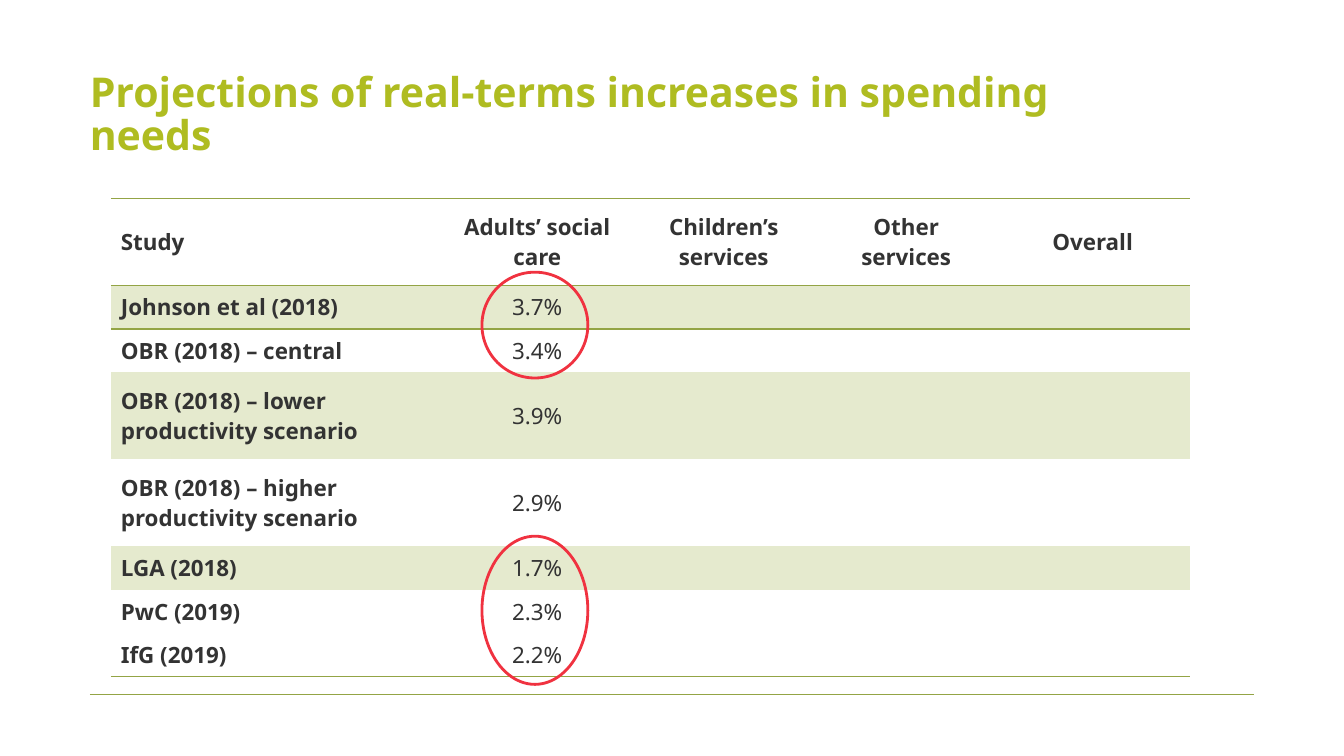
from pptx import Presentation
from pptx.dml.color import RGBColor as RGB
from pptx.enum.shapes import MSO_CONNECTOR as Conn, MSO_SHAPE as Shape
from pptx.enum.text import MSO_ANCHOR as Anchor, PP_ALIGN as Align
from pptx.oxml import parse_xml
from pptx.oxml.ns import nsdecls, qn
from pptx.util import Inches, Pt

HUES = {"title": "AFBC21", "rule": "93A445", "text": "333333",
        "band": "E5EACE", "ring": "F03240"}
PLAIN = "{2D5ABB26-0587-4C30-8999-92F81FD0307C}"
COLS = [24.83, 13.8, 13.95, 13.2, 14.55]
ROW = 5.75
HEADS = ["Study", "Adults’ social care", "Children’s services",
         "Other services", "Overall"]
# study, adults' care, row units, shaded
STUDIES = [
    ("Johnson et al (2018)", "3.7%", 1, True),
    ("OBR (2018) – central", "3.4%", 1, False),
    ("OBR (2018) – lower productivity scenario", "3.9%", 2, True),
    ("OBR (2018) – higher productivity scenario", "2.9%", 2, False),
    ("LGA (2018)", "1.7%", 1, True),
    ("PwC (2019)", "2.3%", 1, False),
    ("IfG (2019)", "2.2%", 1, False),
]


class Deck:
    """Draws on one slide; lengths are percentages of its width and height."""

    def __init__(self, font):
        self.prs = Presentation()
        self.prs.slide_width, self.prs.slide_height = Inches(13.33), Inches(7.5)
        self.slide = self.prs.slides.add_slide(self.prs.slide_layouts[6])
        self.shapes, self.font = self.slide.shapes, font

    def wide(self, share):
        return round(self.prs.slide_width * share / 100)

    def high(self, share):
        return round(self.prs.slide_height * share / 100)

    def box(self, x, y, w, h):
        return self.wide(x), self.high(y), self.wide(w), self.high(h)

    def label(self, para, text, hue, size, bold, **form):
        para.text = text
        for key, val in form.items():
            setattr(para, key, val)
        look = {"name": self.font, "size": Pt(size), "bold": bold}
        font = para.runs[0].font
        for key, val in look.items():
            setattr(font, key, val)
        font.color.rgb = RGB.from_string(HUES[hue])

    def title(self, text, *area):
        frame = self.shapes.add_textbox(*self.box(*area)).text_frame
        form = {"word_wrap": True, "vertical_anchor": Anchor.MIDDLE,
                "margin_left": 0, "margin_right": 0,
                "margin_top": 0, "margin_bottom": 0}
        for key, val in form.items():
            setattr(frame, key, val)
        self.label(frame.paragraphs[0], text, "title", 29.3, True,
                   line_spacing=0.88)

    def rule(self, x, y, end):
        line = self.shapes.add_connector(
            Conn.STRAIGHT, self.wide(x), self.high(y),
            self.wide(end), self.high(y))
        line.line.color.rgb = RGB.from_string(HUES["rule"])
        line.line.width = Pt(0.75)
        line._element.spPr.append(
            parse_xml(f"<a:effectLst {nsdecls('a')}/>"))

    def ring(self, *area):
        oval = self.shapes.add_shape(Shape.OVAL, *self.box(*area))
        oval.shadow.inherit = False
        oval.fill.background()
        oval.line.color.rgb = RGB.from_string(HUES["ring"])
        oval.line.width = Pt(2)

    def edge(self, cell, side):
        """Rule one side of a cell; call before filling it."""
        cell._tc.get_or_add_tcPr().append(parse_xml(
            f'<a:ln{side} {nsdecls("a")} w="12700"><a:solidFill>'
            f'<a:srgbClr val="{HUES["rule"]}"/></a:solidFill></a:ln{side}>'))

    def cell(self, cell, text, bold, align, shade, sides, **gaps):
        form = {"margin_left": Inches(0.1), "margin_right": Inches(0.1),
                "margin_top": 0, "margin_bottom": 0,
                "vertical_anchor": Anchor.MIDDLE}
        for key, val in form.items():
            setattr(cell, key, val)
        for side in sides:
            self.edge(cell, side)
        if shade:
            cell.fill.solid()
            cell.fill.fore_color.rgb = RGB.from_string(HUES["band"])
        else:
            cell.fill.background()
        if text:
            self.label(cell.text_frame.paragraphs[0], text, "text", 16, bold,
                       alignment=align, **gaps)

    def table(self, x, y):
        units = [2] + [study[2] for study in STUDIES]
        grid = self.shapes.add_table(
            len(units), len(COLS),
            *self.box(x, y, sum(COLS), ROW * sum(units))).table
        grid.first_row = grid.horz_banding = False
        grid._tbl.tblPr.find(qn("a:tableStyleId")).text = PLAIN
        for col, share in zip(grid.columns, COLS):
            col.width = self.wide(share)
        for row, unit in zip(grid.rows, units):
            row.height = self.high(ROW * unit)
        for c, head in enumerate(HEADS):
            align = Align.CENTER if c else Align.LEFT
            self.cell(grid.cell(0, c), head, True, align, False, "TB",
                      space_after=Pt(10))
            for r, (name, care, _, shade) in enumerate(STUDIES, 1):
                sides = {1: "T", len(STUDIES): "B"}.get(r, "")
                text = (name, care, "", "", "")[c]
                self.cell(grid.cell(r, c), text, c == 0, align, shade, sides,
                          space_before=Pt(3), space_after=Pt(3))


def main():
    deck = Deck("Noto Sans")
    deck.rule(6.68, 91.87, 93.32)
    deck.title("Projections of real-terms increases in spending needs",
               6.68, 8.67, 71.64, 13.33)
    deck.table(8.25, 26.27)
    for top, tall in ((70.93, 19.6), (36, 14)):
        deck.ring(35.86, top, 7.88, tall)
    deck.prs.save("out.pptx")


if __name__ == "__main__":
    main()
